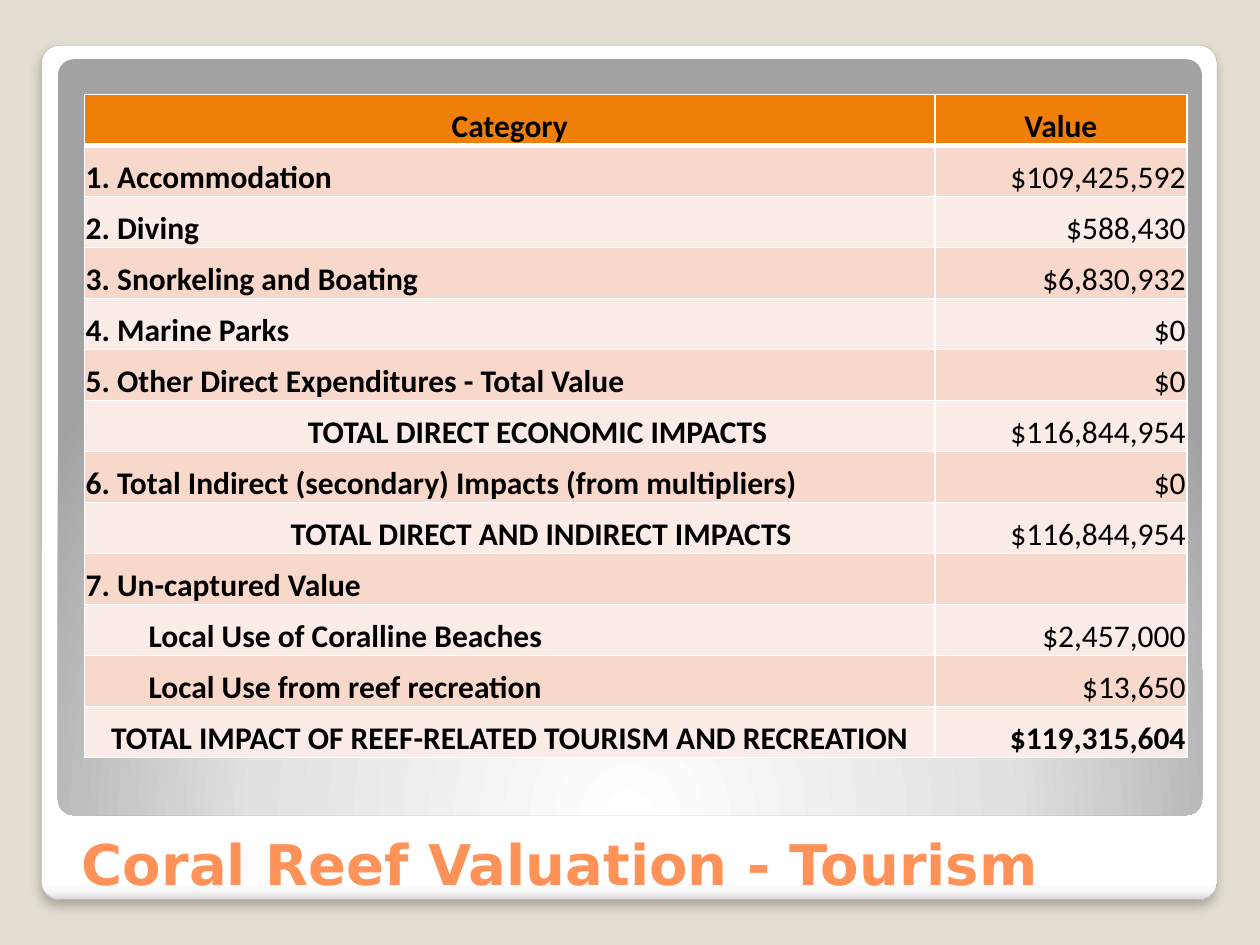
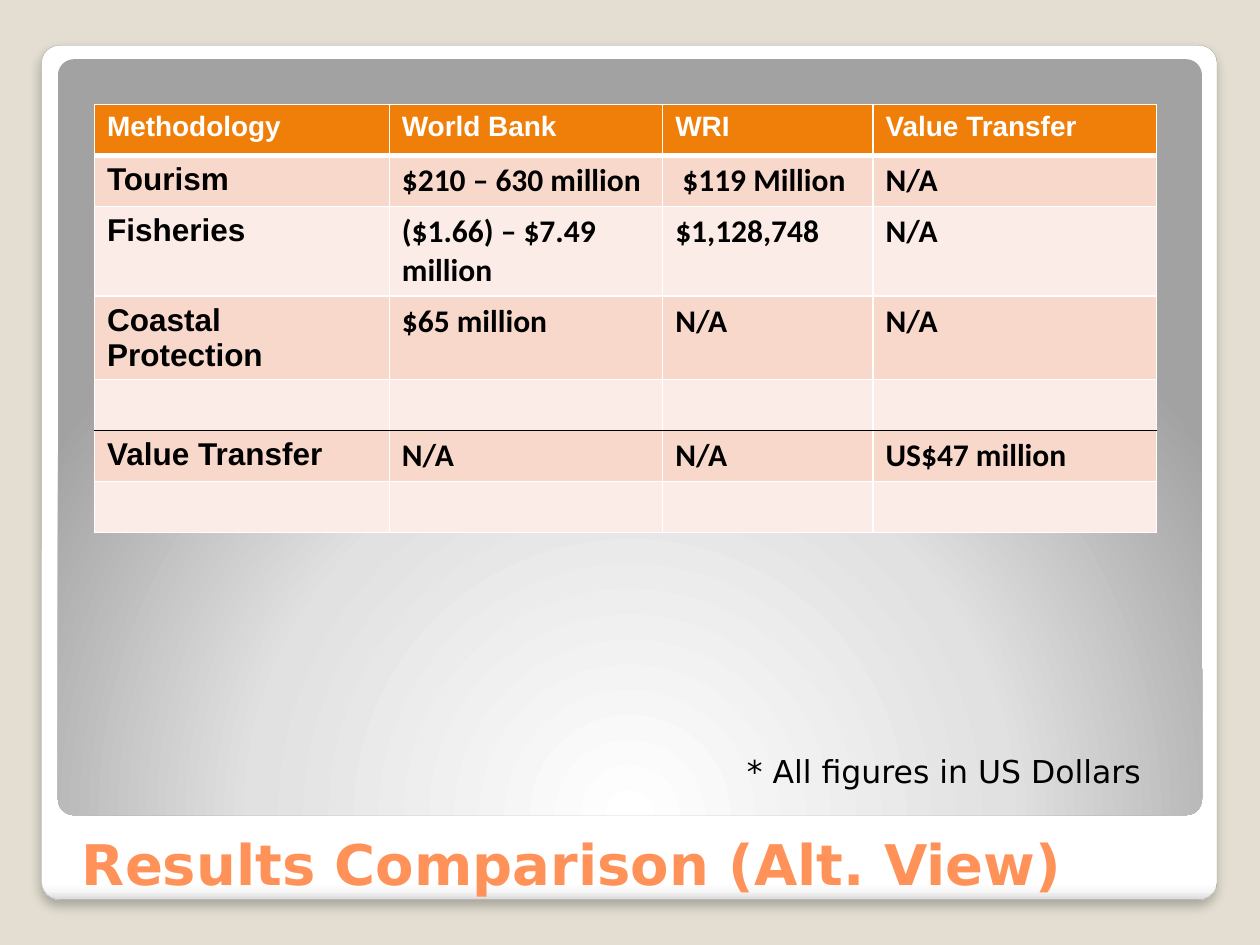
from pptx import Presentation
from pptx.dml.color import RGBColor
from pptx.enum import shapes, text
from pptx.oxml import parse_xml
from pptx.oxml import ns
from pptx.util import Inches, Pt

BACKGROUND = "E3DED1"
WHITE = "FFFFFF"
BLACK = "000000"
TITLE = "FF9258"
HEADER = "F07F09"
BANDS = ["F9D8CC", "FCECE7"]
ROW_HEIGHT = 0.405
LEFT, CENTER, RIGHT = text.PP_ALIGN.LEFT, text.PP_ALIGN.CENTER, text.PP_ALIGN.RIGHT

TOURISM = [
    ("Category", "Value", CENTER, 0),
    ("1. Accommodation", "$109,425,592", LEFT, 0),
    ("2. Diving", "$588,430", LEFT, 0),
    ("3. Snorkeling and Boating", "$6,830,932", LEFT, 0),
    ("4. Marine Parks", "$0", LEFT, 0),
    ("5. Other Direct Expenditures - Total Value", "$0", LEFT, 0),
    ("TOTAL DIRECT ECONOMIC IMPACTS ", "$116,844,954", CENTER, 0.5),
    ("6. Total Indirect (secondary) Impacts (from multipliers)", "$0", LEFT, 0),
    ("TOTAL DIRECT AND INDIRECT IMPACTS", "$116,844,954", CENTER, 0.5),
    ("7. Un-captured Value", "", LEFT, 0),
    ("Local Use of Coralline Beaches", "$2,457,000", LEFT, 0.5),
    ("Local Use from reef recreation", "$13,650", LEFT, 0.5),
    ("TOTAL IMPACT OF REEF-RELATED TOURISM AND RECREATION", "$119,315,604", CENTER, 0),
]

COMPARISON = [
    ("Methodology", "World Bank", "WRI", "Value Transfer"),
    ("Tourism", "$210 – 630 million", " $119 Million", "N/A"),
    ("Fisheries", "($1.66) – $7.49 million", "$1,128,748", "N/A"),
    ("Coastal Protection", "$65 million", "N/A", "N/A"),
    ("", "", "", ""),
    ("Value Transfer", "N/A", "N/A", "US$47 million"),
    ("", "", "", ""),
]
RULE_ROW = 4


def rgb(color):
    return RGBColor.from_string(color)


def format_text(p, font, size, color, bold=False, align=LEFT):
    p.alignment = align
    for r in p.runs:
        r.font.name = font
        r.font.size = Pt(size)
        r.font.bold = bold
        r.font.color.rgb = rgb(color)


def add_panel(s, left, top, width, height, stops, direction):
    sp = s.shapes.add_shape(shapes.MSO_SHAPE.ROUNDED_RECTANGLE, Inches(left),
                            Inches(top), Inches(width), Inches(height))
    sp.adjustments[0] = 0.021
    sp.shadow.inherit = False
    sp.line.fill.background()
    sp.fill.gradient()
    gradient = sp.element.spPr.find(ns.qn("a:gradFill"))
    stop_xml = "".join(f'<a:gs pos="{pos * 1000}"><a:srgbClr val="{color}"/></a:gs>'
                       for pos, color in stops)
    gradient.getparent().replace(gradient, parse_xml(
        f'<a:gradFill {ns.nsdecls("a")} rotWithShape="1">'
        f'<a:gsLst>{stop_xml}</a:gsLst>{direction}</a:gradFill>'))
    return sp


def add_shadow(sp):
    sp.element.spPr.find(ns.qn("a:effectLst")).append(parse_xml(
        f'<a:outerShdw {ns.nsdecls("a")} blurRad="{Pt(6)}" dist="{Pt(4)}" '
        f'dir="5400000" algn="t" rotWithShape="0"><a:srgbClr val="{BLACK}">'
        '<a:alpha val="25000"/></a:srgbClr></a:outerShdw>'))


def build_frame(s, layout):
    card = add_panel(s, 0.33, 0.36, 9.33, 6.78,
                     [(0, WHITE), (98, WHITE), (99, "F7F7F7"), (100, "DADADA")],
                     '<a:lin ang="5400000" scaled="0"/>')
    card.line.color.rgb = rgb("A4A4A4")
    card.line.width = Pt(0.16)
    add_shadow(card)
    panel = add_panel(s, 0.46, 0.47, 9.08, 6,
                      [(0, WHITE), (55, "E1E1E1"), (100, "A2A2A2")],
                      '<a:path path="circle"><a:fillToRect l="50000" t="175000" '
                      'r="50000" b="-75000"/></a:path>')
    tree = layout.element.cSld.spTree
    for position, sp in enumerate([card, panel], start=2):
        tree.insert(position, sp.element)


def set_title(s, title):
    sp = s.shapes.title
    sp.left, sp.top = Inches(0.55), Inches(6.02)
    sp.width, sp.height = Inches(8.95), Inches(1.15)
    tf = sp.text_frame
    tf.text = title
    tf.word_wrap = True
    tf.auto_size = text.MSO_AUTO_SIZE.NONE
    tf.vertical_anchor = text.MSO_ANCHOR.BOTTOM
    format_text(tf.paragraphs[0], "DejaVu Sans", 32, TITLE, bold=True)


def set_borders(cell, top=(WHITE, 1), bottom=(WHITE, 1)):
    edges = {"lnL": (WHITE, 1), "lnR": (WHITE, 1), "lnT": top, "lnB": bottom}
    props = cell._tc.get_or_add_tcPr()
    for position, (tag, (color, width)) in enumerate(edges.items()):
        props.insert(position, parse_xml(
            f'<a:{tag} {ns.nsdecls("a")} w="{Pt(width)}"><a:solidFill>'
            f'<a:srgbClr val="{color}"/></a:solidFill></a:{tag}>'))


def add_banded_table(s, left, top, widths, rows, rule_row=None):
    table = s.shapes.add_table(len(rows), len(widths), Inches(left), Inches(top),
                               Inches(sum(widths)),
                               Inches(ROW_HEIGHT * len(rows))).table
    for column, width in zip(table.columns, widths):
        column.width = Inches(width)
    for i, values in enumerate(rows):
        table.rows[i].height = Inches(ROW_HEIGHT)
        for cell, value in zip(table.rows[i].cells, values):
            cell.text = value
            cell.fill.solid()
            cell.fill.fore_color.rgb = rgb(BANDS[(i - 1) % 2] if i else HEADER)
            above = {1: (WHITE, 3)}.get(i, (WHITE, 1))
            below = (WHITE, 1) if i else (WHITE, 3)
            if rule_row is not None:
                above = (BLACK, 1) if i == rule_row + 1 else above
                below = (BLACK, 1) if i == rule_row else below
            set_borders(cell, above, below)
    return table


def add_tourism_table(s):
    table = add_banded_table(s, 0.67, 0.75, [6.75, 2], [row[:2] for row in TOURISM])
    last = len(TOURISM) - 1
    for i, (_, value, align, indent) in enumerate(TOURISM):
        for j, cell in enumerate(table.rows[i].cells):
            if not cell.text:
                continue
            cell.vertical_anchor = text.MSO_ANCHOR.BOTTOM
            cell.margin_left = cell.margin_right = cell.margin_top = Inches(0.01)
            cell.margin_bottom = 0
            p = cell.text_frame.paragraphs[0]
            format_text(p, "Calibri", 18, BLACK, bold=j == 0 or i in (0, last),
                        align=RIGHT if j and i else align)
            if indent and j == 0:
                p._p.get_or_add_pPr().set("marL", str(Inches(indent)))


def add_comparison_table(s):
    table = add_banded_table(s, 0.75, 0.83, [2.34, 2.17, 1.67, 2.25],
                             COMPARISON, RULE_ROW)
    for i in range(len(COMPARISON)):
        for j, cell in enumerate(table.rows[i].cells):
            font = "Calibri" if i and j else "Arial"
            size, color = (18, BLACK) if i else (16, WHITE)
            format_text(cell.text_frame.paragraphs[0], font, size, color, bold=True)


def add_note(s, note):
    tf = s.shapes.add_textbox(Inches(5.83), Inches(5.92), Inches(3.45),
                              Inches(0.4)).text_frame
    tf.text = note
    tf.word_wrap = False
    tf.auto_size = text.MSO_AUTO_SIZE.SHAPE_TO_FIT_TEXT
    format_text(tf.paragraphs[0], "DejaVu Sans", 18, BLACK)


def main():
    prs = Presentation()
    prs.slide_width, prs.slide_height = Inches(10), Inches(7.5)
    fill = prs.slide_master.background.fill
    fill.solid()
    fill.fore_color.rgb = rgb(BACKGROUND)
    layout = prs.slide_layouts[5]

    s = prs.slides.add_slide(layout)
    build_frame(s, layout)
    set_title(s, "Coral Reef Valuation - Tourism")
    add_tourism_table(s)

    s = prs.slides.add_slide(layout)
    set_title(s, "Results Comparison (Alt. View)")
    add_comparison_table(s)
    add_note(s, "* All figures in US Dollars")

    prs.save("out.pptx")


if __name__ == "__main__":
    main()
